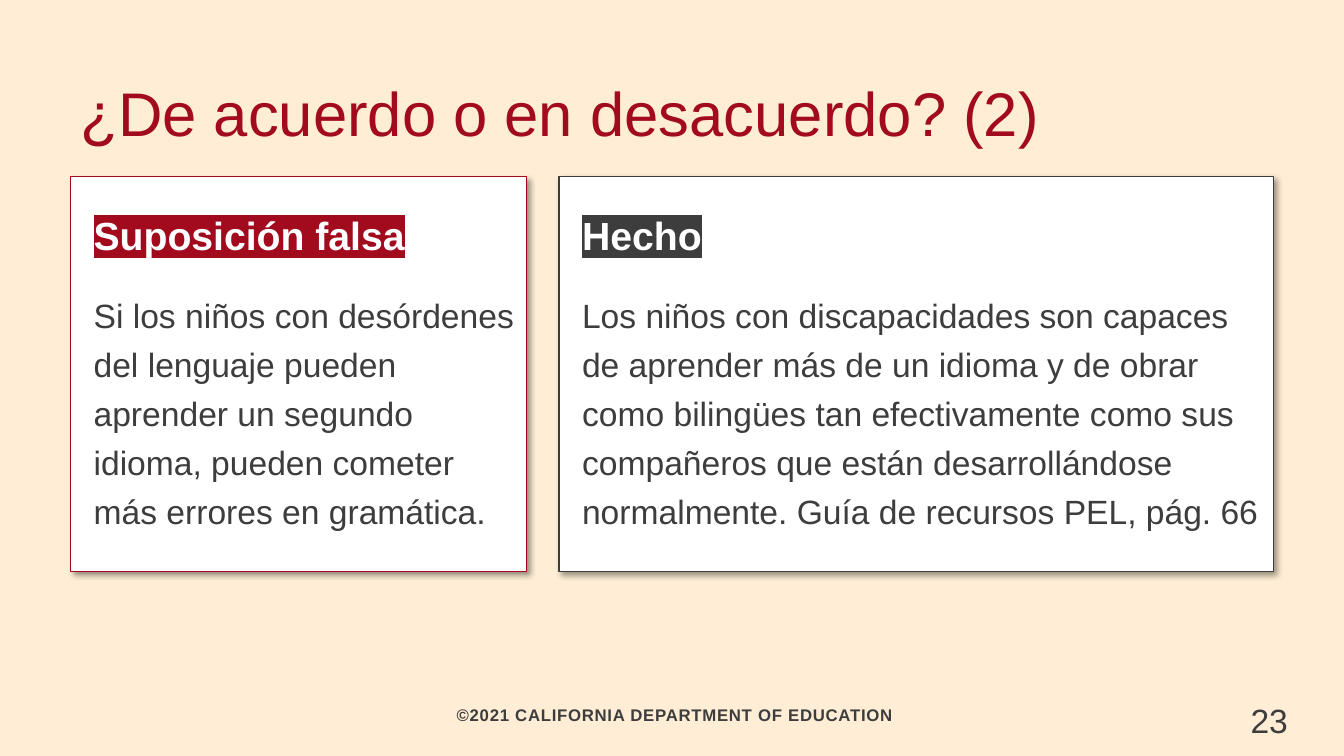
from lxml import etree
from pptx import Presentation
from pptx.dml.color import RGBColor
from pptx.enum import shapes, text
from pptx.oxml import ns
from pptx.util import Pt

CREAM, WHITE, RED, GRAY = "FFEED5", "FFFFFF", "A20B1D", "3D3D3D"
LEFT = 50.4
CARD_TOP, CARD_HEIGHT = 126, 282.2


def color(value):
    return RGBColor.from_string(value)


def add_child(parent, tag, **attributes):
    return etree.SubElement(parent, ns.qn(tag), attributes)


def add_span(para, words, size, ink, bold=False):
    span = para.add_run()
    span.text = words
    span.font.name = "Arial"
    span.font.size = Pt(size)
    span.font.bold = bold
    span.font.color.rgb = color(ink)
    return span


def add_text_box(page, left, top, width, height, anchor=text.MSO_ANCHOR.TOP):
    """Add a wrapping text box and return its first paragraph."""
    box = page.shapes.add_textbox(Pt(left), Pt(top), Pt(width), Pt(height))
    box.text_frame.word_wrap = True
    box.text_frame.vertical_anchor = anchor
    return box.text_frame.paragraphs[0]


def set_indent(para, margin, first_line=0):
    properties = para._p.get_or_add_pPr()
    properties.set("marL", str(Pt(margin)))
    properties.set("indent", str(Pt(first_line)))


def highlight(span, fill):
    mark = etree.Element(ns.qn("a:highlight"))
    add_child(mark, "a:srgbClr", val=fill)
    span._r.rPr.find(ns.qn("a:solidFill")).addnext(mark)


def add_shadow(card):
    card.shadow.inherit = False
    effects = card._element.spPr.find(ns.qn("a:effectLst"))
    shadow = add_child(effects, "a:outerShdw", blurRad=str(Pt(4)), dist=str(Pt(3)),
                       dir=str(45 * 60000), algn="tl", rotWithShape="0")
    shade = add_child(shadow, "a:srgbClr", val="000000")
    add_child(shade, "a:alpha", val="40000")


def add_title(page, left, top, width, height, words):
    para = add_text_box(page, left, top, width, height, text.MSO_ANCHOR.BOTTOM)
    para.line_spacing = 0.85
    add_span(para, words, 44, RED)


def add_card(page, left, top, width, height, accent, heading, body):
    card = page.shapes.add_shape(shapes.MSO_SHAPE.RECTANGLE,
                                 Pt(left), Pt(top), Pt(width), Pt(height))
    card.fill.solid()
    card.fill.fore_color.rgb = color(WHITE)
    card.line.color.rgb = color(accent)
    card.line.width = Pt(0.75)
    add_shadow(card)

    frame = card.text_frame
    frame.word_wrap = True
    frame.vertical_anchor = text.MSO_ANCHOR.MIDDLE
    heading_para, body_para = frame.paragraphs[0], frame.add_paragraph()
    for para in (heading_para, body_para):
        para.alignment = text.PP_ALIGN.LEFT
        para.space_after = Pt(5)
        set_indent(para, 9.4)
    heading_para.line_spacing = 0.9
    body_para.line_spacing = Pt(35)
    body_para.space_before = Pt(15)
    highlight(add_span(heading_para, heading, 28, WHITE, bold=True), accent)
    add_span(body_para, body, 24, GRAY)


def add_footer(page, left, top, width, height, words):
    para = add_text_box(page, left, top, width, height, text.MSO_ANCHOR.MIDDLE)
    para.alignment = text.PP_ALIGN.CENTER
    para.line_spacing = 0.95
    set_indent(para, 36, -32.4)
    span = add_span(para, words, 12, GRAY, bold=True)
    span._r.rPr.set("spc", "50")


def add_page_number(page, left, top, width, height, number):
    add_span(add_text_box(page, left, top, width, height), number, 24, GRAY)


def main():
    deck = Presentation()
    deck.slide_width, deck.slide_height = Pt(960), Pt(540)
    page = deck.slides.add_slide(deck.slide_layouts[6])
    page.background.fill.solid()
    page.background.fill.fore_color.rgb = color(CREAM)

    add_footer(page, 74.2, 501.1, 812.2, 20.9, "©2021 CALIFORNIA DEPARTMENT OF EDUCATION")
    add_title(page, LEFT, 20.2, 887.8, 90, "¿De acuerdo o en desacuerdo? (2)")
    add_card(page, LEFT, CARD_TOP, 325.4, CARD_HEIGHT, RED, "Suposición falsa",
             "Si los niños con desórdenes del lenguaje pueden aprender un segundo idioma, "
             "pueden cometer más errores en gramática.")
    add_card(page, 399.3, CARD_TOP, 510.5, CARD_HEIGHT, GRAY, "Hecho",
             "Los niños con discapacidades son capaces de aprender más de un idioma y de "
             "obrar como bilingües tan efectivamente como sus compañeros que están "
             "desarrollándose normalmente. Guía de recursos PEL, pág. 66")
    add_page_number(page, 886.2, 496.1, 73.8, 33.8, "23")
    deck.save("out.pptx")


if __name__ == "__main__":
    main()
